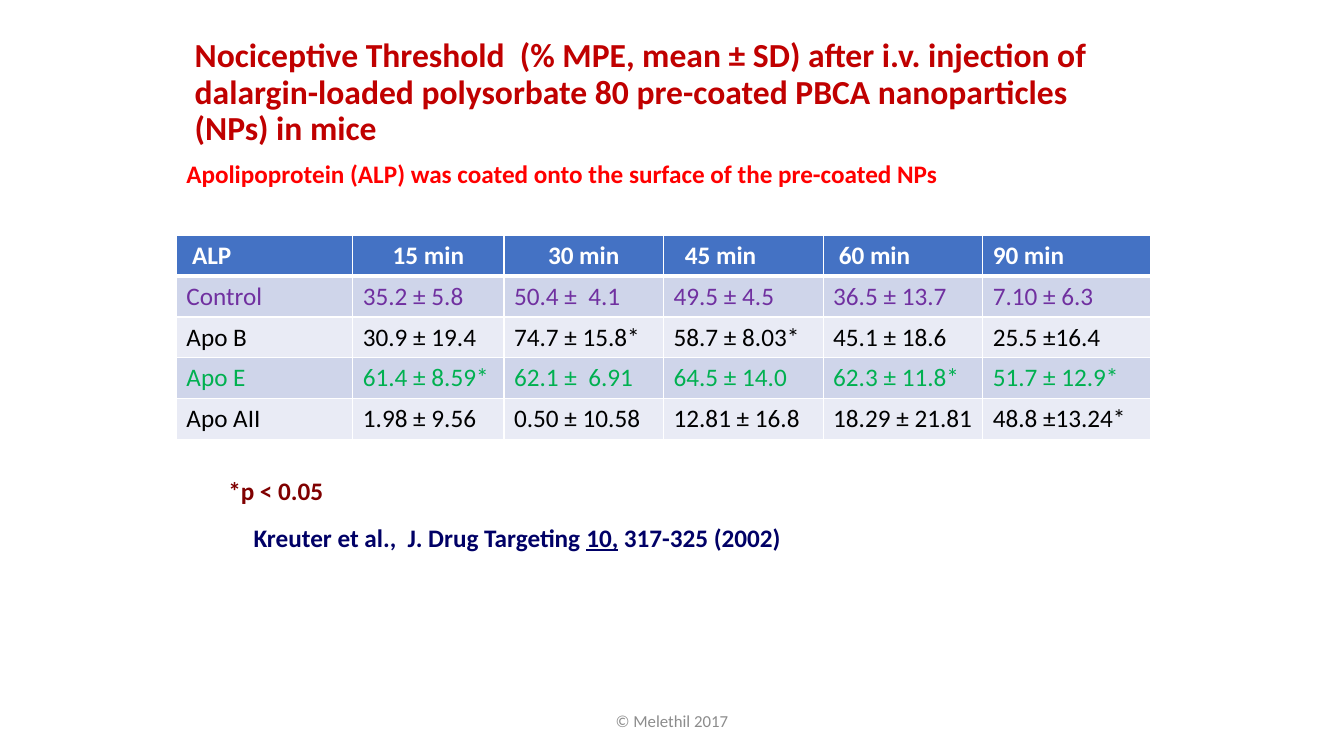
from lxml.etree import SubElement
from pptx import Presentation
from pptx.dml.color import RGBColor
from pptx.enum.text import MSO_ANCHOR, PP_ALIGN
from pptx.oxml.ns import qn
from pptx.util import Pt

COLOURS = {
    "title": "C00000", "subtitle": "FF0000", "note": "800000",
    "citation": "000066", "footer": "8C8C8C", "white": "FFFFFF",
    "header": "4472C4", "odd": "CFD5EA", "even": "E9EBF5",
    "purple": "7030A0", "black": "000000", "green": "00B050",
}
COLUMN_WIDTHS = [126, 108, 114, 114, 114, 120]
ROW_HEIGHT = 29.2
CELL_MARGIN = 7.2
HEADINGS = ["ALP", "15 min", "30 min", "45 min", "60 min", "90 min"]
HEADING_INDENTS = {0: 4, 3: 8, 4: 4}
CENTRED_HEADINGS = (1, 2)
GROUPS = [
    ("purple", ["Control", "35.2 ± 5.8", "50.4 ±  4.1", "49.5 ± 4.5", "36.5 ± 13.7", "7.10 ± 6.3"]),
    ("black", ["Apo B", "30.9 ± 19.4", "74.7 ± 15.8*", "58.7 ± 8.03*", "45.1 ± 18.6", "25.5 ±16.4"]),
    ("green", ["Apo E", "61.4 ± 8.59*", "62.1 ±  6.91", "64.5 ± 14.0", "62.3 ± 11.8*", "51.7 ± 12.9*"]),
    ("black", ["Apo AII", "1.98 ± 9.56", "0.50 ± 10.58", "12.81 ± 16.8", "18.29 ± 21.81", "48.8 ±13.24*"]),
]


def colour(name):
    return RGBColor.from_string(COLOURS[name])


def add_span(para, text, colour_name, **changes):
    span = para.add_run()
    span.text = text
    formats = {"name": "Calibri", "size": Pt(18), "bold": True, **changes}
    for attribute, value in formats.items():
        setattr(span.font, attribute, value)
    span.font.color.rgb = colour(colour_name)


def add_text(page, place, colour_name, texts, anchor=MSO_ANCHOR.TOP, para_format=None, **changes):
    """Texts are (wording, font changes) pairs that share one paragraph."""
    box = page.shapes.add_textbox(*map(Pt, place))
    box.text_frame.word_wrap = True
    box.text_frame.vertical_anchor = anchor
    para = box.text_frame.paragraphs[0]
    for attribute, value in (para_format or {}).items():
        setattr(para, attribute, value)
    for text, own in texts:
        add_span(para, text, colour_name, **{**changes, **own})


def add_borders(cell, bottom_width):
    properties = cell._tc.get_or_add_tcPr()
    for side, width in {"L": 1, "R": 1, "T": 1, "B": bottom_width}.items():
        line = SubElement(properties, qn(f"a:ln{side}"), w=str(Pt(width)))
        fill = SubElement(line, qn("a:solidFill"))
        SubElement(fill, qn("a:srgbClr"), val=COLOURS["white"])


def fill_cell(cell, text, text_colour, fill_colour, bold=False, bottom_width=1):
    add_borders(cell, bottom_width)
    cell.fill.solid()
    cell.fill.fore_color.rgb = colour(fill_colour)
    add_span(cell.text_frame.paragraphs[0], text, text_colour, bold=bold)


def add_threshold_table(page):
    row_count = len(GROUPS) + 1
    frame = page.shapes.add_table(
        row_count, len(HEADINGS), Pt(126), Pt(168),
        Pt(sum(COLUMN_WIDTHS)), Pt(ROW_HEIGHT * row_count))
    table = frame.table
    for column, width in zip(table.columns, COLUMN_WIDTHS):
        column.width = Pt(width)
    for row in table.rows:
        row.height = Pt(ROW_HEIGHT)

    # Heading row
    for index, heading in enumerate(HEADINGS):
        cell = table.cell(0, index)
        fill_cell(cell, heading, "white", "header", bold=True, bottom_width=3)
        cell.margin_left = Pt(CELL_MARGIN + HEADING_INDENTS.get(index, 0))
        if index in CENTRED_HEADINGS:
            cell.text_frame.paragraphs[0].alignment = PP_ALIGN.CENTER

    # One banded row for each group
    for row_index, (text_colour, values) in enumerate(GROUPS, start=1):
        band = "odd" if row_index % 2 else "even"
        for index, value in enumerate(values):
            fill_cell(table.cell(row_index, index), value, text_colour, band)


def main():
    deck = Presentation()
    deck.slide_width, deck.slide_height = Pt(960), Pt(540)
    page = deck.slides.add_slide(deck.slide_layouts[6])

    # Title and subtitle
    title = ("Nociceptive Threshold  (% MPE, mean ± SD) after i.v. injection of "
             "dalargin-loaded polysorbate 80 pre-coated PBCA nanoparticles (NPs) in mice")
    add_text(page, (132, 21.6, 672, 90), "title", [(title, {})],
             MSO_ANCHOR.MIDDLE, {"line_spacing": 0.9}, size=Pt(24))
    add_text(page, (126, 109.5, 704, 29), "subtitle",
             [("Apolipoprotein (ALP) was coated onto the surface of the pre-coated NPs", {})])

    add_threshold_table(page)

    # Significance note, citation and footer
    add_text(page, (156, 336, 540, 30), "note", [("*p < 0.05", {})])
    add_text(page, (174, 369.5, 564, 29), "citation", [
        ("Kreuter et al.,  J. Drug Targeting ", {}),
        ("10,", {"underline": True}),
        (" 317-325 (2002)", {}),
    ])
    add_text(page, (318, 500.5, 324, 29), "footer", [("© Melethil 2017", {})],
             MSO_ANCHOR.MIDDLE, {"alignment": PP_ALIGN.CENTER}, size=Pt(12), bold=False)

    deck.save("out.pptx")


if __name__ == "__main__":
    main()
